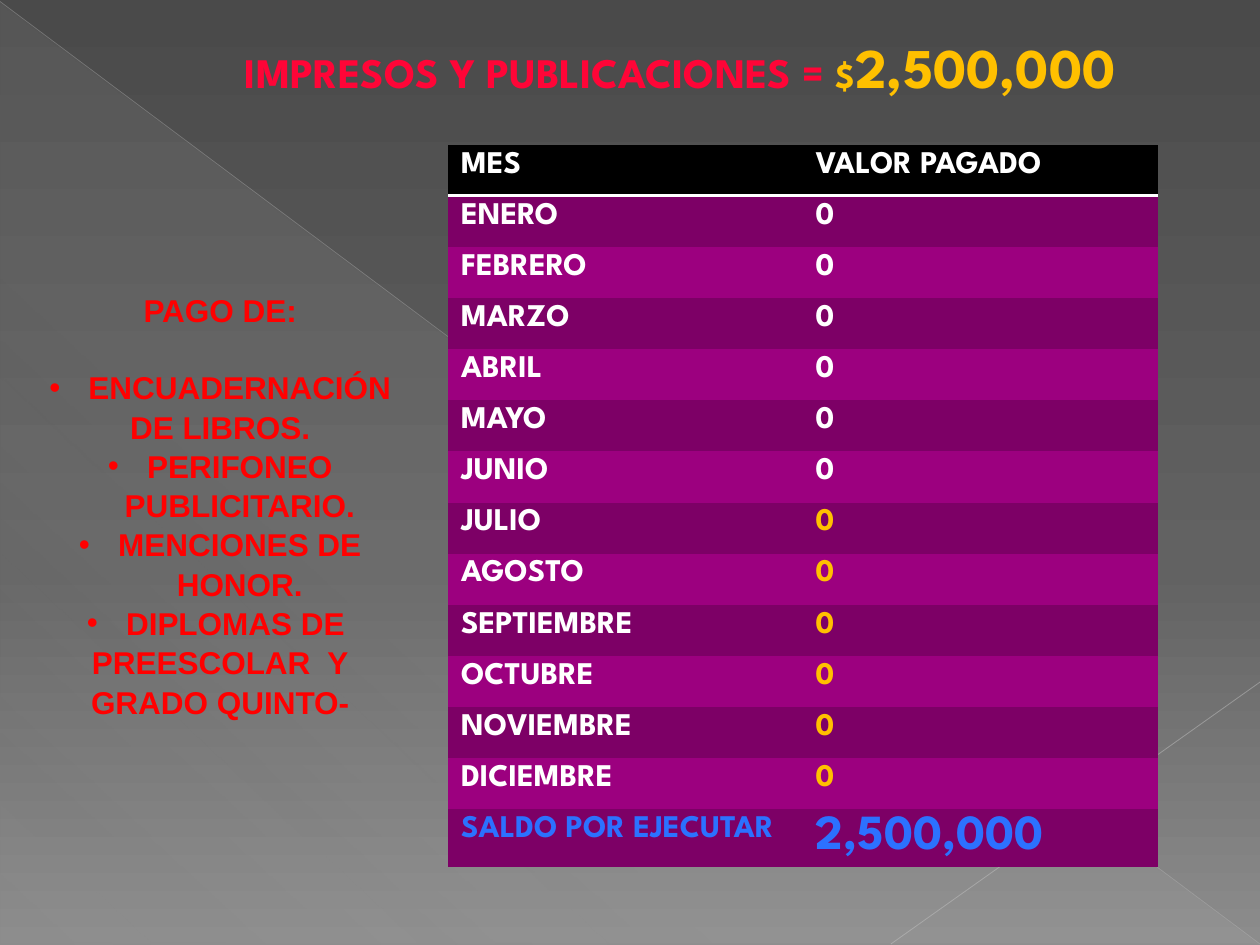
from dataclasses import dataclass

from lxml import etree
from pptx import Presentation
from pptx import util as u
from pptx.dml.color import RGBColor
from pptx.enum import shapes, text
from pptx.oxml.ns import qn

Cm, Pt = u.Cm, u.Pt


@dataclass(frozen=True)
class Theme:
    display: str = "League Spartan"
    body: str = "Arial"
    heading: str = "FF0537"
    gold: str = "FFC000"
    note: str = "FF0000"
    balance: str = "2C71FF"
    white: str = "FFFFFF"
    header_fill: str = "000000"
    bands: tuple = ("7D0066", "9C007F")
    backdrop: tuple = ((0, "4A4A4A", 100), (60, "626262", 100), (100, "8C8C8C", 100))
    sheen: tuple = ((0, "D2D2D2", 10), (70, "D2D2D2", 8), (100, "D2D2D2", 1))
    text_size: int = 18
    currency_size: int = 20
    heading_size: int = 24
    balance_size: int = 28
    amount_size: int = 32


THEME = Theme()
NO_GRID_STYLE = "{2D5ABB26-0587-4C30-8999-92F81FD0307C}"
MONTHS = ("ENERO", "FEBRERO", "MARZO", "ABRIL", "MAYO", "JUNIO", "JULIO",
          "AGOSTO", "SEPTIEMBRE", "OCTUBRE", "NOVIEMBRE", "DICIEMBRE")
PENDING_FROM = MONTHS.index("JULIO")
# (wording, starts with a bullet)
PAYMENTS = (
    ("ENCUADERNACIÓN", True),
    ("DE LIBROS.", False),
    ("PERIFONEO PUBLICITARIO.", True),
    ("MENCIONES DE HONOR.", True),
    ("DIPLOMAS DE ", True),
    ("PREESCOLAR  Y", False),
    ("GRADO QUINTO-", False),
)


def style_font(font, size, colour, name):
    font.size, font.bold, font.name = Pt(size), True, name
    font.color.rgb = RGBColor.from_string(colour)


def set_alpha(colour_element, percent):
    etree.SubElement(colour_element, qn("a:alpha"), val=str(percent * 1000))


def fill_gradient(fill, owner, stops, angle):
    """Give fill, found inside the owner element, any number of stops."""
    fill.gradient()
    gradient = next(owner.iter(qn("a:gradFill")))
    stop_list = gradient.find(qn("a:gsLst"))
    for old in list(stop_list):
        stop_list.remove(old)
    for position, colour, opacity in stops:
        stop = etree.SubElement(stop_list, qn("a:gs"), pos=str(position * 1000))
        set_alpha(etree.SubElement(stop, qn("a:srgbClr"), val=colour), opacity)
    gradient.find(qn("a:lin")).set("ang", str(angle * 60000))


def add_hairline(slide, start, end, colour, width, opacity):
    line = slide.shapes.add_connector(
        shapes.MSO_CONNECTOR.STRAIGHT, *map(Cm, start + end))
    line.line.width = Pt(width)
    line.line.color.rgb = RGBColor.from_string(colour)
    set_alpha(next(line.element.spPr.iter(qn("a:srgbClr"))), opacity)
    etree.SubElement(line.element.spPr, qn("a:effectLst"))


def add_backdrop(slide, left, top, width, height):
    fill_gradient(slide.background.fill, slide.element, THEME.backdrop, 90)
    sheen = slide.shapes.add_shape(
        shapes.MSO_SHAPE.RIGHT_TRIANGLE, *map(Cm, (left, top, width, height)))
    sheen.shadow.inherit = False
    sheen.line.fill.background()
    fill_gradient(sheen.fill, sheen.element, THEME.sheen, 133)
    right, bottom = left + width, top + height
    add_hairline(slide, (left, top), (right, bottom), "BFBFBF", 0.39, 35)
    add_hairline(slide, (right, bottom - 5.28), (right - 7.44, bottom),
                 "C6C6C6", 0.47, 45)


def add_heading(slide, left, top, width, height):
    title = slide.shapes.title
    title.left, title.top, title.width, title.height = map(
        Cm, (left, top, width, height))
    title.element.getparent().append(title.element)  # in front of the backdrop
    frame = title.text_frame
    frame.word_wrap = True
    frame.auto_size = text.MSO_AUTO_SIZE.NONE
    frame.vertical_anchor = text.MSO_ANCHOR.TOP
    line = frame.paragraphs[0]
    line.alignment = text.PP_ALIGN.CENTER
    for wording, size, colour in (
            ("IMPRESOS Y PUBLICACIONES = ", THEME.heading_size, THEME.heading),
            ("$", THEME.currency_size, THEME.gold),
            ("2,500,000", THEME.amount_size, THEME.gold)):
        run = line.add_run()
        run.text = wording
        style_font(run.font, size, colour, THEME.display)


def add_bullet(paragraph):
    properties = paragraph._p.get_or_add_pPr()
    properties.set("marL", str(Cm(0.79)))
    properties.set("indent", str(-Cm(0.79)))
    etree.SubElement(properties, qn("a:buFont"), typeface=THEME.body)
    etree.SubElement(properties, qn("a:buChar"), char="•")


def add_payment_list(slide, left, top, width, height):
    frame = slide.shapes.add_textbox(
        *map(Cm, (left, top, width, height))).text_frame
    frame.word_wrap = True
    for index, (wording, bulleted) in enumerate((("PAGO DE:", False),) + PAYMENTS):
        paragraph = frame.add_paragraph() if index else frame.paragraphs[0]
        paragraph.text = wording
        paragraph.alignment = text.PP_ALIGN.CENTER
        paragraph.line_spacing = 1.04
        paragraph.space_after = Pt(0 if index else 21.5)
        style_font(paragraph.font, THEME.text_size, THEME.note, THEME.body)
        if bulleted:
            add_bullet(paragraph)


def underline_cell(cell):
    border = etree.Element(qn("a:lnB"), w=str(Pt(2)))
    solid = etree.SubElement(border, qn("a:solidFill"))
    etree.SubElement(solid, qn("a:srgbClr"), val=THEME.white)
    cell._tc.get_or_add_tcPr().insert(0, border)


def write_cell(cell, wording, fill, colour, size):
    cell.fill.solid()
    cell.fill.fore_color.rgb = RGBColor.from_string(fill)
    paragraph = cell.text_frame.paragraphs[0]
    paragraph.text = wording
    style_font(paragraph.font, size, colour, THEME.display)


def add_month_table(slide, left, top, width, height):
    white, size = THEME.white, THEME.text_size
    rows = [(("MES", white, size), ("VALOR PAGADO", white, size))]
    for index, month in enumerate(MONTHS):
        paid_colour = white if index < PENDING_FROM else THEME.gold
        rows.append(((month, white, size), ("0", paid_colour, size)))
    rows.append((("SALDO POR EJECUTAR", THEME.balance, size),
                 ("2,500,000", THEME.balance, THEME.balance_size)))

    table = slide.shapes.add_table(
        len(rows), 2, *map(Cm, (left, top, width, height))).table
    table.first_row = table.horz_banding = False
    next(table._tbl.iter(qn("a:tableStyleId"))).text = NO_GRID_STYLE
    for r, row in enumerate(rows):
        fill = THEME.bands[(r - 1) % 2] if r else THEME.header_fill
        for c, (wording, colour, points) in enumerate(row):
            write_cell(table.cell(r, c), wording, fill, colour, points)
            if r == 0:
                underline_cell(table.cell(r, c))


def main():
    deck = Presentation()
    deck.slide_width, deck.slide_height = Cm(25.4), Cm(19.05)
    slide = deck.slides.add_slide(deck.slide_layouts.get_by_name("Title Only"))
    add_backdrop(slide, 0, 0.03, 25.4, 19)
    add_month_table(slide, 9.04, 2.92, 14.3, 14.42)
    add_heading(slide, 4.29, 0.53, 18.85, 1.63)
    add_payment_list(slide, 0.53, 5.72, 7.82, 9.5)
    deck.save("out.pptx")


if __name__ == "__main__":
    main()
